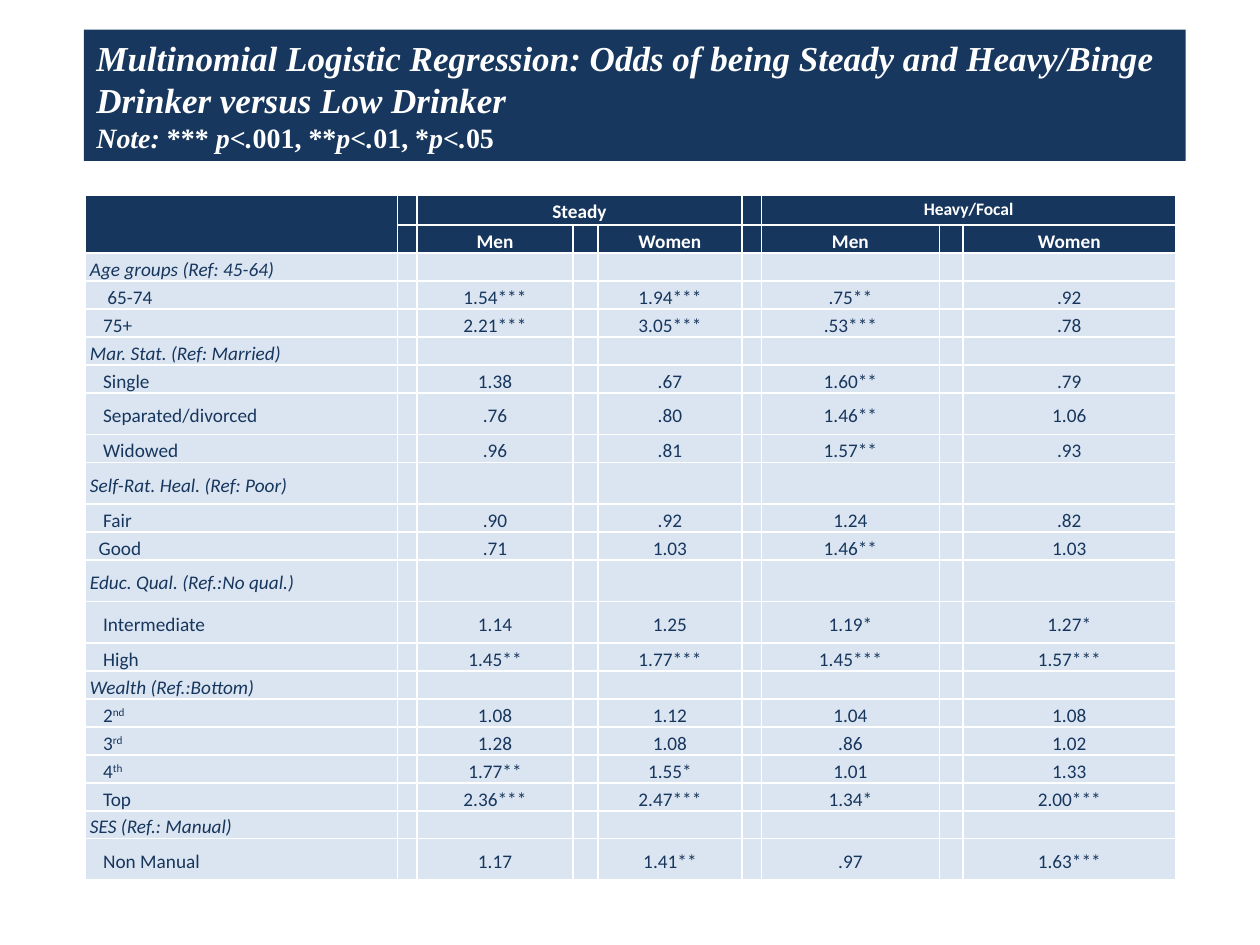
import pptx
import pptx.util
import pptx.dml.color
import pptx.enum.shapes
import pptx.enum.text
import pptx.oxml
import pptx.oxml.ns

Pt = pptx.util.Pt
ALIGN = pptx.enum.text.PP_ALIGN
ANCHOR = pptx.enum.text.MSO_ANCHOR


def rgb(code):
    return pptx.dml.color.RGBColor.from_string(code)


class Deck:
    """Holds the style and the current slide."""
    navy, ink, pale, white = "17375E", "17365D", "DBE5F1", "FFFFFF"
    serif, sans = "Times New Roman", "Calibri"

    def __init__(self, width, height):
        self.prs = pptx.Presentation()
        self.prs.slide_width, self.prs.slide_height = Pt(width), Pt(height)
        self.s = self.prs.slides.add_slide(self.prs.slide_layouts[6])

    def add_run(self, p, text, font, size, color, bold=False, italic=False):
        r = p.add_run()
        r.text = text
        r.font.name, r.font.size = font, Pt(size)
        r.font.bold, r.font.italic = bold, italic
        r.font.color.rgb = rgb(color)
        return r

    def banner(self, x, y, w, h, lines):
        """Filled title box; each line is a size and (text, italic) pairs."""
        sp = self.s.shapes.add_shape(
            pptx.enum.shapes.MSO_SHAPE.RECTANGLE, Pt(x), Pt(y), Pt(w), Pt(h))
        sp.shadow.inherit = False
        sp.fill.solid()
        sp.fill.fore_color.rgb = rgb(self.navy)
        sp.line.fill.background()
        tf = sp.text_frame
        tf.word_wrap = True
        tf.auto_size = pptx.enum.text.MSO_AUTO_SIZE.SHAPE_TO_FIT_TEXT
        tf.vertical_anchor = ANCHOR.MIDDLE
        for i, (size, runs) in enumerate(lines):
            p = tf.add_paragraph() if i else tf.paragraphs[0]
            p.alignment = ALIGN.LEFT
            for text, italic in runs:
                self.add_run(p, text, self.serif, size, self.white, True, italic)

    def table(self, x, y, widths, heights):
        tbl = self.s.shapes.add_table(
            len(heights), len(widths), Pt(x), Pt(y),
            Pt(sum(widths)), Pt(sum(heights))).table
        tbl.first_row = tbl.horz_banding = False
        for col, w in zip(tbl.columns, widths):
            col.width = Pt(w)
        for row, h in zip(tbl.rows, heights):
            row.height = Pt(h)
        return tbl

    def blank_cell(self, cell, fill):
        """Fill, white borders and tight margins for one cell."""
        cell.fill.solid()
        cell.fill.fore_color.rgb = rgb(fill)
        cell.margin_left = cell.margin_right = Pt(2.9)
        cell.margin_top, cell.margin_bottom = Pt(0.7), 0
        tcPr = cell._tc.get_or_add_tcPr()
        for i, side in enumerate("LRTB"):
            tcPr.insert(i, pptx.oxml.parse_xml(
                f'<a:ln{side} {pptx.oxml.ns.nsdecls("a")} w="12700"><a:solidFill>'
                f'<a:srgbClr val="{self.white}"/></a:solidFill></a:ln{side}>'))
        end = cell.text_frame.paragraphs[0]._p.get_or_add_endParaRPr()
        end.set("sz", "1100")

    def cell_text(self, cell, text, color, align=ALIGN.CENTER,
                  anchor=ANCHOR.MIDDLE, size=11, bold=False, italic=False,
                  indent=0):
        """Cell text; a part after ^ is superscript."""
        cell.vertical_anchor = anchor
        p = cell.text_frame.paragraphs[0]
        p.alignment, p.line_spacing, p.space_after = align, 1.15, Pt(10)
        if indent:
            p._p.get_or_add_pPr().set("marL", str(Pt(indent)))
        for i, part in enumerate(text.split("^")):
            r = self.add_run(p, part, self.sans, size, color, bold, italic)
            if i:
                r.font._element.set("baseline", "30000")


# Rows: label, indent in points (0 is a group heading), odds ratios
ROWS = [
    ("Age groups (Ref: 45-64)", 0, ""),
    ("65-74", 10, "1.54*** 1.94*** .75** .92"),
    ("75+", 7.5, "2.21*** 3.05*** .53*** .78"),
    ("Mar. Stat. (Ref: Married)", 0, ""),
    ("Single", 7.5, "1.38 .67 1.60** .79"),
    ("Separated/divorced", 7.5, ".76 .80 1.46** 1.06"),
    ("Widowed", 7.5, ".96 .81 1.57** .93"),
    ("Self-Rat. Heal. (Ref: Poor)", 0, ""),
    ("Fair", 7.5, ".90 .92 1.24 .82"),
    ("Good", 5, ".71 1.03 1.46** 1.03"),
    ("Educ. Qual. (Ref.:No qual.)", 0, ""),
    ("Intermediate", 7.5, "1.14 1.25 1.19* 1.27*"),
    ("High", 7.5, "1.45** 1.77*** 1.45*** 1.57***"),
    ("Wealth (Ref.:Bottom)", 0, ""),
    ("2^nd", 7.5, "1.08 1.12 1.04 1.08"),
    ("3^rd", 7.5, "1.28 1.08 .86 1.02"),
    ("4^th", 7.5, "1.77** 1.55* 1.01 1.33"),
    ("Top", 7.5, "2.36*** 2.47*** 1.34* 2.00***"),
    ("SES (Ref.: Manual)", 0, ""),
    ("Non Manual", 7.5, "1.17 1.41** .97 1.63***"),
]
TALL = {"Separated/divorced", "Self-Rat. Heal. (Ref: Poor)",
        "Educ. Qual. (Ref.:No qual.)", "Intermediate", "Non Manual"}
WIDTHS = [178.6, 11.2, 89.2, 14.3, 82.2, 11.2, 101.7, 13.5, 121.5]
HEADERS = 2
VALUE_COLS = range(2, len(WIDTHS), 2)


def main():
    d = Deck(720, 540)

    # Title
    d.banner(48, 17, 629.5, 75, [
        (20, [("Multinomial Logistic Regression: Odds of being Steady and "
               "Heavy/Binge Drinker versus Low Drinker", True)]),
        (16, [("Note: ", True), ("*** ", False), ("p<.", True),
              ("001, **", False), ("p<.", True), ("01, *", False),
              ("p<.", True), ("05", False)]),
    ])

    # Table grid
    heights = [17.3, 16] + [23.7 if row[0] in TALL else 16 for row in ROWS]
    tbl = d.table(48.5, 111.4, WIDTHS, heights)
    for i in range(len(heights)):
        for j in range(len(WIDTHS)):
            d.blank_cell(tbl.cell(i, j), d.ink if i < HEADERS else d.pale)

    # Header rows
    head = dict(color=d.white, anchor=ANCHOR.TOP, bold=True)
    tbl.cell(0, 0).merge(tbl.cell(1, 0))
    for j, text, size in [(2, "Steady", 11), (6, "Heavy/Focal", 10)]:
        tbl.cell(0, j).merge(tbl.cell(0, j + 2))
        d.cell_text(tbl.cell(0, j), text, size=size, **head)
    for j, text in zip(VALUE_COLS, ["Men", "Women"] * 2):
        d.cell_text(tbl.cell(1, j), text, **head)

    # Body rows
    for i, (label, indent, values) in enumerate(ROWS, HEADERS):
        d.cell_text(tbl.cell(i, 0), label, d.ink, ALIGN.LEFT,
                    italic=not indent, indent=indent)
        for j, value in zip(VALUE_COLS, values.split()):
            d.cell_text(tbl.cell(i, j), value, d.ink)

    d.prs.save("out.pptx")


if __name__ == "__main__":
    main()
